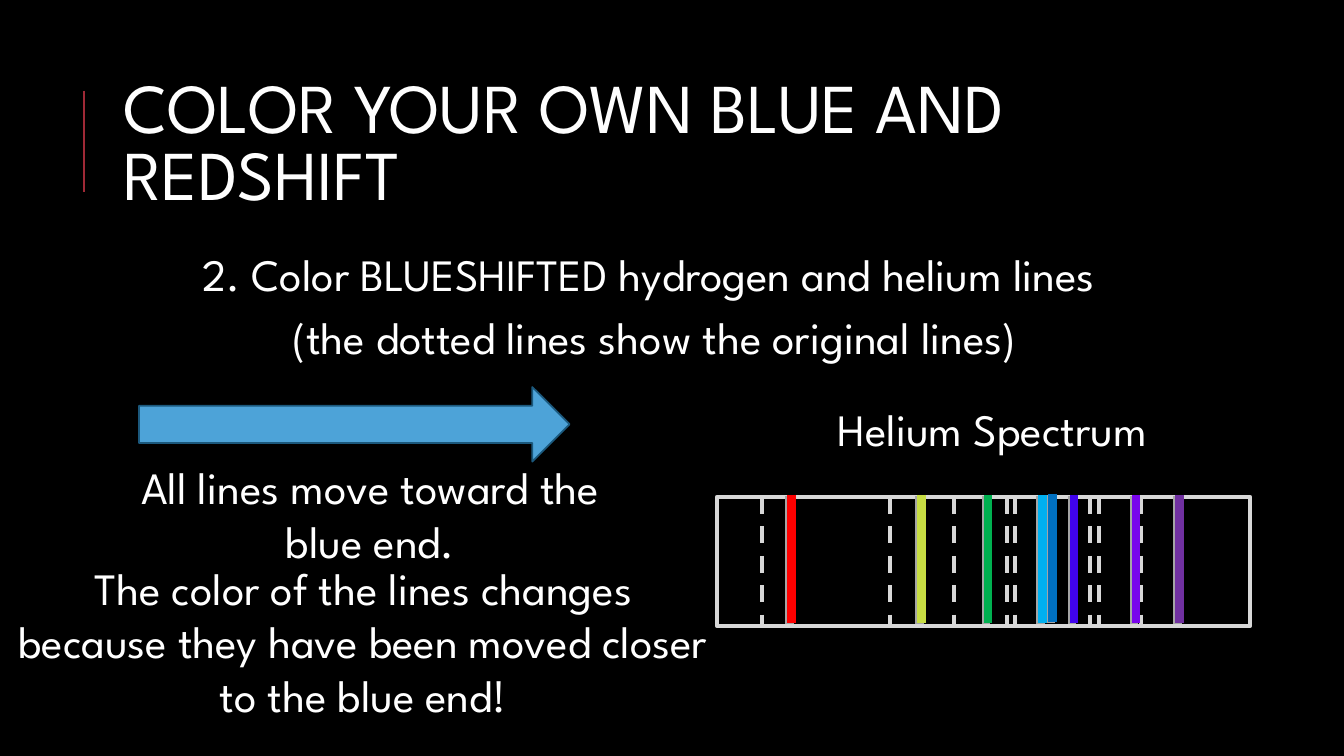
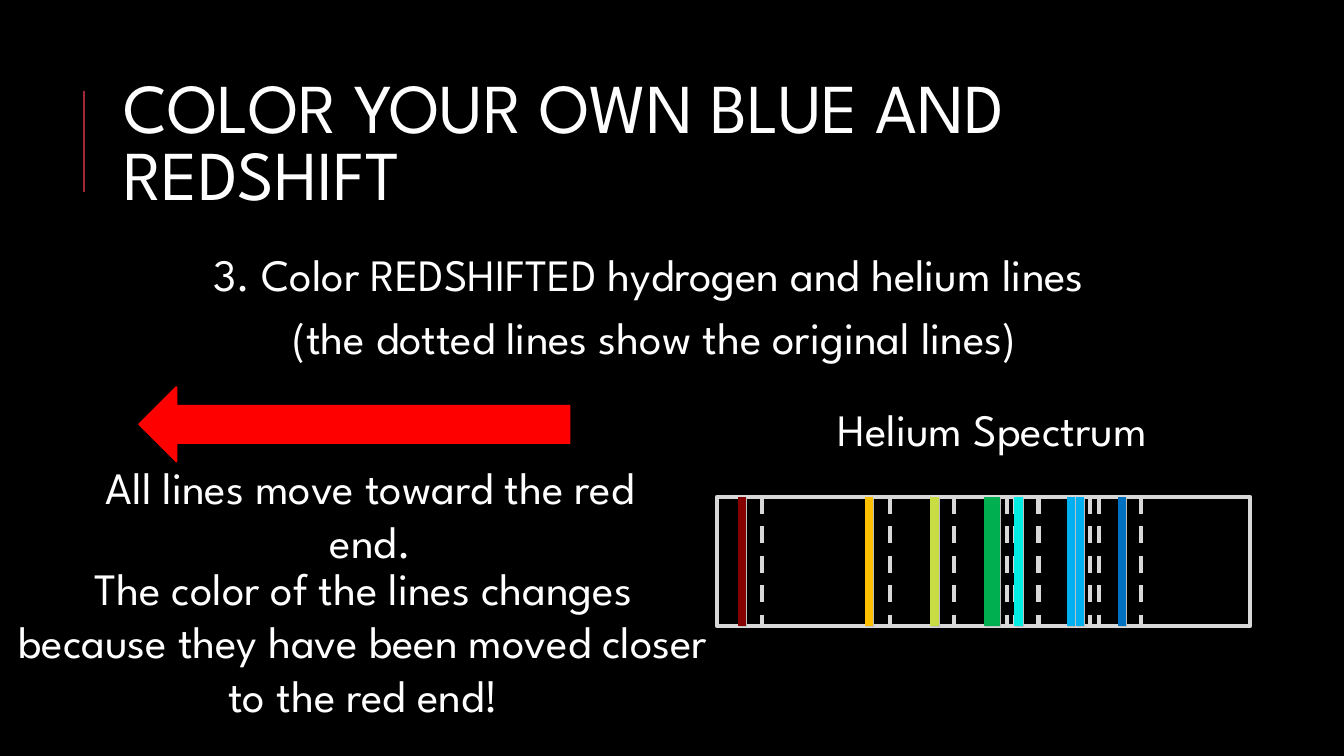
import dataclasses

import lxml.etree
import pptx
import pptx.dml.color
import pptx.enum.dml
import pptx.enum.shapes
import pptx.enum.text
import pptx.oxml.ns
import pptx.util

Inches = pptx.util.Inches
Pt = pptx.util.Pt
qn = pptx.oxml.ns.qn
Align = pptx.enum.text.PP_ALIGN
Anchor = pptx.enum.text.MSO_ANCHOR
Preset = pptx.enum.shapes.MSO_SHAPE


@dataclasses.dataclass(frozen=True)
class Theme:
    font: str = "League Spartan"
    back: str = "000000"
    text: str = "FFFFFF"
    title: str = "FEFEFE"
    accent: str = "9F2936"
    frame: str = "D8D8D8"
    head: int = 50
    body: int = 32
    tight: float = 0.8


FRAME = (7.11, 4.93, 5.29, 1.28)
DASHES = (7.56, 8.83, 9.46, 9.99, 10.07, 10.3, 10.81, 10.9, 11.32)


@dataclasses.dataclass(frozen=True)
class Shift:
    """One direction of shift; bands are (x, rise, colour)."""
    step: str
    end: str
    arrow: Preset
    fill: str
    edge: str
    top: float
    tall: float
    under: str
    nudge: float
    bands: tuple


SHIFTS = (
    Shift("2. Color BLUESHIFTED hydrogen and helium lines ", "blue",
          Preset.RIGHT_ARROW, "4DA3D8", "1B587C", 4.91, 1.27, "A5A5A5", -0.02,
          ((11.7, 0, "7030A0"), (9.14, 0, "C7DD43"), (9.8, 0, "00B050"),
           (10.34, 0, "00B0F0"), (10.44, 0.01, "0070C0"), (10.65, 0, "4003ED"),
           (11.27, 0, "7804EC"), (7.85, 0, "FF0000"))),
    Shift("3. Color REDSHIFTED hydrogen and helium lines ", "red",
          Preset.LEFT_ARROW, "FF0000", "FF0000", 4.93, 1.28, "BFBFBF", 0.01,
          ((11.13, 0, "0070C0"), (8.62, 0, "FFC000"), (10.62, 0, "00B0F0"),
           (9.27, 0, "C7DD43"), (9.8, 0, "00B050"), (9.88, 0, "00B050"),
           (10.1, 0, "03EDE2"), (10.71, 0, "00B0F0"), (7.36, 0, "860000"))),
)


def color(code):
    return pptx.dml.color.RGBColor.from_string(code)


class Deck:
    def __init__(self, theme):
        self.theme = theme
        self.file = pptx.Presentation()
        self.file.slide_width = Inches(13.33)
        self.file.slide_height = Inches(7.5)
        fill = self.file.slide_master.background.fill
        fill.solid()
        fill.fore_color.rgb = color(theme.back)
        self.slide = None

    def start(self):
        """Add a slide with the accent rule beside the title."""
        self.slide = self.file.slides.add_slide(self.file.slide_layouts[1])
        self.line(0.83, 0.9, 1, self.theme.accent, 1.5)

    def place(self, shape, box):
        shape.left, shape.top, shape.width, shape.height = map(Inches, box)

    def frame(self, shape, inset, anchor=Anchor.TOP):
        """Set wrapping, insets and anchor; return the text frame."""
        frame = shape.text_frame
        frame.word_wrap = True
        frame.auto_size = pptx.enum.text.MSO_AUTO_SIZE.NONE
        frame.vertical_anchor = anchor
        frame.margin_left = frame.margin_right = Inches(inset)
        frame.margin_top = frame.margin_bottom = Inches(0.05)
        return frame

    def run(self, para, text, size, code):
        run = para.add_run()
        run.text = text
        run.font.name = self.theme.font
        run.font.size = Pt(size)
        run.font.color.rgb = color(code)

    def title(self, text):
        shape = self.slide.shapes.title
        self.place(shape, (1.12, 0.64, 10.63, 1.64))
        para = self.frame(shape, 0.1, Anchor.MIDDLE).paragraphs[0]
        para.alignment = Align.LEFT
        para.line_spacing = self.theme.tight
        self.run(para, text, self.theme.head, self.theme.title)

    def body(self, lines):
        shape = self.slide.placeholders[1]
        self.place(shape, (1.12, 2.5, 10.63, 1.22))
        frame = self.frame(shape, 0.05)
        for i, text in enumerate(lines):
            para = frame.add_paragraph() if i else frame.paragraphs[0]
            para.alignment = Align.CENTER
            para.line_spacing = self.theme.tight
            para.space_before = Pt(14 if i else 0)
            props = para._p.get_or_add_pPr()
            props.set("marL", str(Inches(0.1)))
            props.set("indent", str(Inches(-0.1)))
            lxml.etree.SubElement(props, qn("a:buChar"), char=" ")
            self.run(para, text, self.theme.body, self.theme.text)

    def label(self, text, box):
        shape = self.slide.shapes.add_textbox(*map(Inches, box))
        para = self.frame(shape, 0.1).paragraphs[0]
        para.alignment = Align.CENTER
        self.run(para, text, self.theme.body, self.theme.text)

    def shape(self, kind, box, edge, width, fill=None):
        shape = self.slide.shapes.add_shape(kind, *map(Inches, box))
        shape.shadow.inherit = False
        if fill:
            shape.fill.solid()
            shape.fill.fore_color.rgb = color(fill)
        else:
            shape.fill.background()
        shape.line.color.rgb = color(edge)
        shape.line.width = Pt(width)

    def line(self, x, top, tall, code, width, dash=False):
        """Draw an upright line."""
        line = self.slide.shapes.add_connector(
            pptx.enum.shapes.MSO_CONNECTOR.STRAIGHT,
            Inches(x), Inches(top), Inches(x), Inches(top + tall))
        line.line.color.rgb = color(code)
        line.line.width = Pt(width)
        if dash:
            line.line.dash_style = pptx.enum.dml.MSO_LINE.DASH
        lxml.etree.SubElement(line._element.spPr, qn("a:effectLst"))

    def chart(self, shift):
        """Draw the framed spectrum: dashed rest lines, then shifted bands."""
        self.shape(Preset.RECTANGLE, FRAME, self.theme.frame, 3)
        for x in DASHES:
            self.line(x, FRAME[1], FRAME[3], self.theme.frame, 3, True)
        for x, rise, _ in shift.bands:
            self.line(x + shift.nudge, shift.top - rise + 0.01, shift.tall,
                      shift.under, 6)
        for x, rise, code in shift.bands:
            self.line(x, shift.top - rise, shift.tall, code, 6)


def main():
    deck = Deck(Theme())
    for shift in SHIFTS:
        deck.start()
        deck.title("COLOR YOUR OWN BLUE AND REDSHIFT")
        deck.body((shift.step, "(the dotted lines show the original lines)"))
        deck.label("Helium Spectrum", (7.96, 3.94, 3.77, 0.64))
        deck.chart(shift)
        deck.shape(shift.arrow, (1.38, 3.84, 4.27, 0.74), shift.edge, 1.25,
                   shift.fill)
        deck.label(f"All lines move toward the {shift.end} end.",
                   (0.94, 4.51, 5.47, 1.18))
        deck.label("The color of the lines changes because they have been "
                   f"moved closer to the {shift.end} end!",
                   (0.08, 5.51, 7.05, 1.72))
    deck.file.save("out.pptx")


if __name__ == "__main__":
    main()
